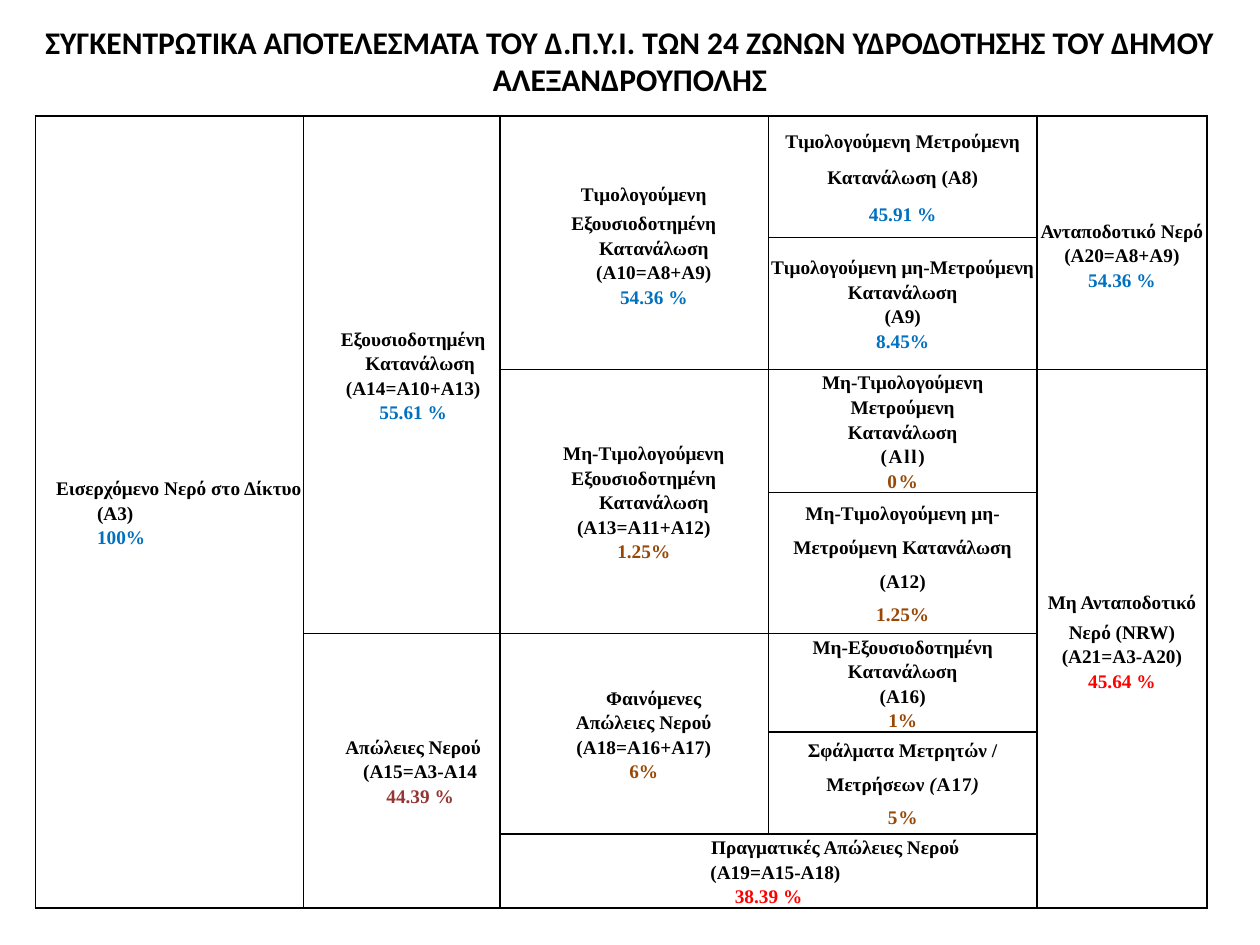
from dataclasses import dataclass
from itertools import product

from lxml.etree import SubElement
from pptx import Presentation
from pptx.dml.color import RGBColor
from pptx.enum.text import MSO_ANCHOR as Anchor, MSO_AUTO_SIZE as AutoSize, PP_ALIGN as Align
from pptx.oxml import parse_xml
from pptx.oxml.ns import nsdecls, qn
from pptx.util import Inches, Pt

BLACK = RGBColor(0x00, 0x00, 0x00)
WHITE = RGBColor(0xFF, 0xFF, 0xFF)
BLUE = RGBColor(0x00, 0x70, 0xC0)
BROWN = RGBColor(0x98, 0x48, 0x06)
MAROON = RGBColor(0x94, 0x36, 0x34)
RED = RGBColor(0xFF, 0x00, 0x00)

TITLE = ("ΣΥΓΚΕΝΤΡΩΤΙΚΑ ΑΠΟΤΕΛΕΣΜΑΤΑ ΤΟΥ Δ.Π.Υ.Ι. ΤΩΝ 24 ΖΩΝΩΝ "
         "ΥΔΡΟΔΟΤΗΣΗΣ ΤΟΥ ΔΗΜΟΥ ΑΛΕΞΑΝΔΡΟΥΠΟΛΗΣ")
COLUMN_WIDTHS = (2.13, 1.56, 2.13, 2.13, 1.35)
ROW_HEIGHTS = (0.16, 0.71, 0.94, 0.94, 1.12, 0.75, 0.81, 0.56)
BODY_SIZE = 11
# Sides left open so the blank top-right cell joins the one below it
OPEN_SIDES = {(0, 4): "B", (1, 4): "T"}


@dataclass(frozen=True)
class Span:
    text: str
    italic: bool = False
    tracking: float = 0


@dataclass(frozen=True)
class Line:
    spans: tuple[Span, ...]
    color: RGBColor = BLACK
    indent: float = 0
    spacing: float | Pt = 1.15
    align: Align = Align.CENTER


@dataclass(frozen=True)
class Block:
    row: int
    column: int
    lines: tuple[Line, ...]
    rows: int = 1
    columns: int = 1
    anchor: Anchor = Anchor.MIDDLE


def line(text: str, color: RGBColor = BLACK, indent: float = 0, tracking: float = 0,
         **layout) -> Line:
    """A line made of a single span."""
    return Line((Span(text, tracking=tracking),), color, indent, **layout)


TALL = {"spacing": Pt(20.9)}
MEDIUM = {"spacing": Pt(19.2)}
SNUG = {"spacing": Pt(16.6)}

BLOCKS = (
    # System input
    Block(0, 0, (line("Εισερχόμενο Νερό στο Δίκτυο", indent=0.15),
                 line("(A3)", indent=0.49, align=Align.LEFT),
                 line("100%", BLUE, 0.49, align=Align.LEFT)), rows=8),
    # Authorised consumption and losses
    Block(0, 1, (line("Εξουσιοδοτημένη", indent=0.18),
                 line("Κατανάλωση", indent=0.29),
                 line("(Α14=Α10+Α13)", indent=0.18),
                 line("55.61 %", BLUE, 0.18)), rows=5),
    Block(5, 1, (line("Απώλειες Νερού", indent=0.18),
                 line("(Α15=Α3-Α14", indent=0.29),
                 line("44.39 %", MAROON, 0.29)), rows=3),
    # Subtotals
    Block(0, 2, (line("Τιμολογούμενη Εξουσιοδοτημένη", indent=0.15, **SNUG),
                 line("Κατανάλωση", indent=0.31),
                 line("(Α10=Α8+Α9)", indent=0.31),
                 line("54.36 %", BLUE, 0.31)), rows=3),
    Block(3, 2, (line("Μη-Τιμολογούμενη", indent=0.15),
                 line("Εξουσιοδοτημένη", indent=0.15),
                 line("Κατανάλωση", indent=0.31),
                 line("(Α13=Α11+Α12)", indent=0.15),
                 line("1.25%", BROWN, 0.15)), rows=2),
    Block(5, 2, (line("Φαινόμενες", indent=0.31),
                 line("Απώλειες Νερού", indent=0.15),
                 line("(Α18=Α16+Α17)", indent=0.15),
                 line("6%", BROWN, 0.15)), rows=2),
    Block(7, 2, (line("Πραγματικές Απώλειες Νερού", indent=1.06),
                 line("(Α19=Α15-Α18)", indent=0.11),
                 line("38.39 %", RED)), columns=2, anchor=Anchor.TOP),
    # Components
    Block(0, 3, (line("Τιμολογούμενη Μετρούμενη"),
                 line("Κατανάλωση (Α8)", **TALL),
                 line("45.91 %", BLUE, **TALL)), rows=2),
    Block(2, 3, (line("Τιμολογούμενη μη-Μετρούμενη"), line("Κατανάλωση"),
                 line("(Α9)"), line("8.45%", BLUE))),
    Block(3, 3, (line("Μη-Τιμολογούμενη Μετρούμενη"), line("Κατανάλωση"),
                 line("(All)", tracking=1), line("0%", BROWN, tracking=1))),
    Block(4, 3, (line("Μη-Τιμολογούμενη μη-"),
                 line("Μετρούμενη Κατανάλωση (Α12)", **MEDIUM),
                 line("1.25%", BROWN, **MEDIUM))),
    Block(5, 3, (line("Μη-Εξουσιοδοτημένη"), line("Κατανάλωση"),
                 line("(Α16)"), line("1%", BROWN))),
    Block(6, 3, (line("Σφάλματα Μετρητών /"),
                 Line((Span("Μετρήσεων "), Span("(", True, 0.5),
                       Span("Α17", False, 0.5), Span(")", True, 0.5)), **MEDIUM),
                 line("5%", BROWN, tracking=0.5, **MEDIUM))),
    # Revenue and non-revenue water
    Block(1, 4, (line("Ανταποδοτικό Νερό"), line("(Α20=Α8+Α9)"),
                 line("54.36 %", BLUE)), rows=2),
    Block(3, 4, (line("Μη Ανταποδοτικό Νερό (NRW)", **SNUG),
                 line("(Α21=Α3-Α20)"), line("45.64 %", RED)), rows=5),
)


def add_span(para, text: str, *, font: str, size: float, color: RGBColor = BLACK,
             italic: bool = False, tracking: float = 0) -> None:
    span = para.add_run()
    span.text = text
    span.font.name, span.font.size = font, Pt(size)
    span.font.bold, span.font.italic = True, italic
    span.font.color.rgb = color
    if tracking:
        span._r.get_or_add_rPr().set("spc", str(round(tracking * 100)))


def style_cell(cell, open_side: str) -> None:
    """White fill, no margins, thin black borders except on the open side."""
    cell.margin_left = cell.margin_right = cell.margin_top = cell.margin_bottom = 0
    cell.fill.solid()
    cell.fill.fore_color.rgb = WHITE
    properties = cell._tc.get_or_add_tcPr()
    for position, side in enumerate("LRTB"):
        paint = ("<a:noFill/>" if side == open_side else
                 f'<a:solidFill><a:srgbClr val="{BLACK}"/></a:solidFill>')
        properties.insert(position, parse_xml(
            f'<a:ln{side} {nsdecls("a")} w="{Pt(1)}">{paint}</a:ln{side}>'))


def fill_block(table, block: Block) -> None:
    cell = table.cell(block.row, block.column)
    if block.rows > 1 or block.columns > 1:
        cell.merge(table.cell(block.row + block.rows - 1, block.column + block.columns - 1))
    cell.vertical_anchor = block.anchor
    for number, entry in enumerate(block.lines):
        para = cell.text_frame.add_paragraph() if number else cell.text_frame.paragraphs[0]
        para.alignment, para.line_spacing = entry.align, entry.spacing
        if entry.indent:
            layout = para._p.get_or_add_pPr()
            layout.set("marL", str(Inches(entry.indent)))
            layout.set("indent", "0")
        for span in entry.spans:
            add_span(para, span.text, font="Times New Roman", size=BODY_SIZE,
                     color=entry.color, italic=span.italic, tracking=span.tracking)


def add_balance_table(page) -> None:
    table = page.shapes.add_table(
        len(ROW_HEIGHTS), len(COLUMN_WIDTHS), Inches(0.28), Inches(0.92),
        Inches(sum(COLUMN_WIDTHS)), Inches(sum(ROW_HEIGHTS))).table
    table.first_row = table.horz_banding = False
    for column, width in zip(table.columns, COLUMN_WIDTHS):
        column.width = Inches(width)
    for row, height in zip(table.rows, ROW_HEIGHTS):
        row.height = Inches(height)
    for place in product(range(len(ROW_HEIGHTS)), range(len(COLUMN_WIDTHS))):
        cell = table.cell(*place)
        style_cell(cell, OPEN_SIDES.get(place, ""))
        # Keeps blank cells as low as one body line
        SubElement(cell.text_frame.paragraphs[0]._p, qn("a:endParaRPr"),
                   sz=str(BODY_SIZE * 100))
    for block in BLOCKS:
        fill_block(table, block)


def add_title(page) -> None:
    box = page.shapes.add_textbox(0, Inches(0.13), Inches(10), Inches(0.71))
    box.text_frame.word_wrap = True
    box.text_frame.auto_size = AutoSize.SHAPE_TO_FIT_TEXT
    para = box.text_frame.paragraphs[0]
    para.alignment = Align.CENTER
    add_span(para, TITLE, font="Calibri", size=18)


def main() -> None:
    deck = Presentation()
    deck.slide_width, deck.slide_height = Inches(10), Inches(7.5)
    page = deck.slides.add_slide(deck.slide_layouts[6])
    add_balance_table(page)
    add_title(page)
    deck.save("out.pptx")


if __name__ == "__main__":
    main()
